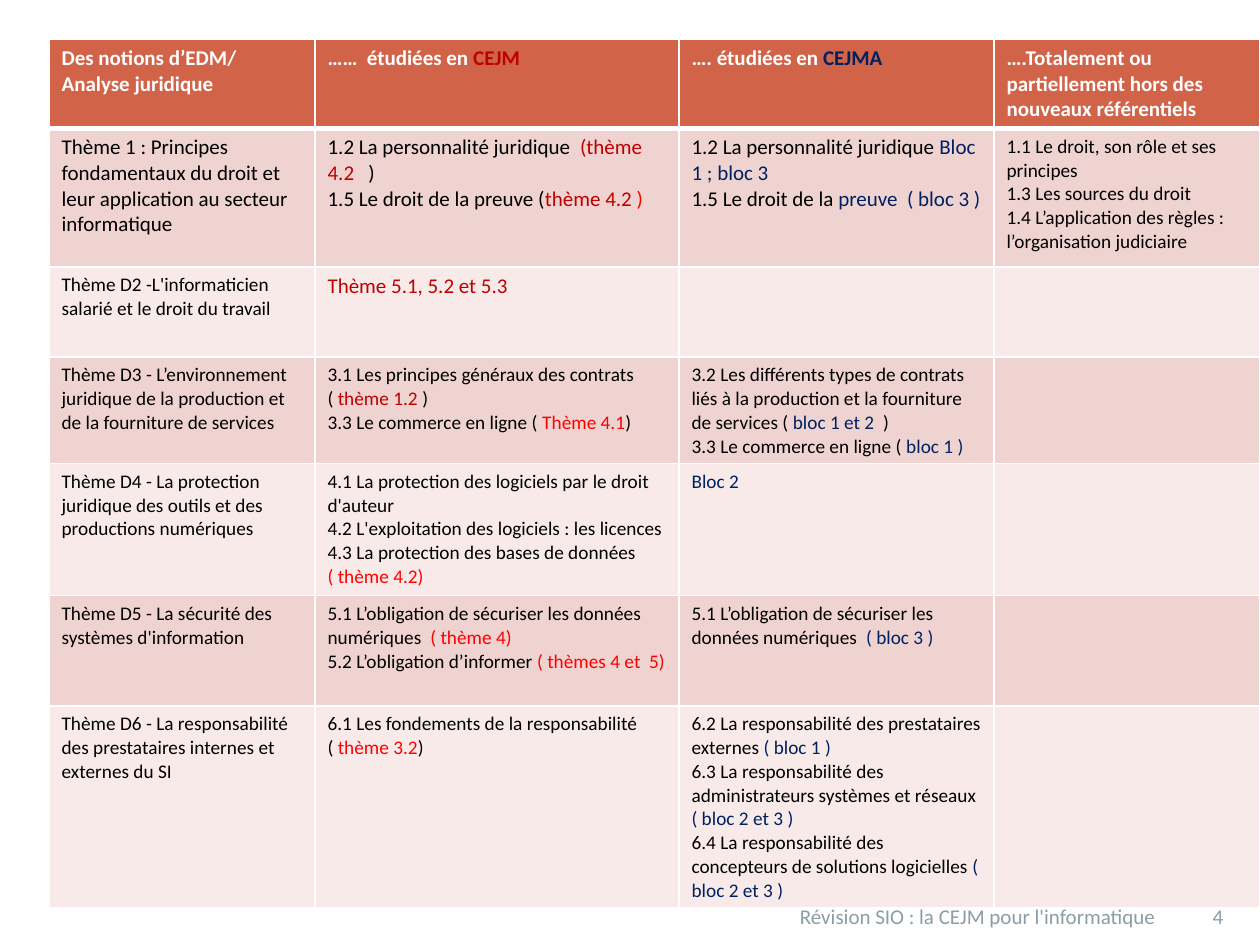
import pptx
import pptx.util
import pptx.dml.color
import pptx.enum.text
import pptx.oxml.ns
from lxml import etree

Pt = pptx.util.Pt
FONT = "Calibri"
WHITE, BLACK, GREY = "FFFFFF", "000000", "8B9DA6"
DARK, RED, NAVY = "C00000", "FF0000", "002060"
HEAD, BANDS = "D16349", ("EED3D0", "F7EAE9")

# A cell is a list of paragraphs, a paragraph a list of runs:
# plain text, or (text, colour).
ROWS = [
    [
        [["Des notions d’EDM/ Analyse juridique"]],
        [["……  étudiées en ", ("CEJM", DARK)]],
        [["…. étudiées en ", ("CEJMA", NAVY)]],
        [["….Totalement ou partiellement hors des nouveaux référentiels"]],
    ],
    [
        [["Thème 1 : Principes fondamentaux du droit et leur application au secteur informatique"]],
        [["1.2 La personnalité juridique  ", ("(thème 4.2   ", DARK), ")"],
         ["1.5 Le droit de la preuve (", ("thème 4.2 ", DARK), (")", RED)]],
        [["1.2 La personnalité juridique ", ("Bloc 1 ; bloc 3", NAVY)],
         ["1.5 Le droit de la ", ("preuve  ( bloc 3 )", NAVY)]],
        [["1.1 Le droit, son rôle et ses principes"],
         ["1.3 Les sources du droit"],
         ["1.4 L’application des règles : l’organisation judiciaire"]],
    ],
    [
        [["Thème D2 -L'informaticien salarié et le droit du travail"]],
        [[("Thème 5.1, 5.2 et 5.3", DARK)]],
        [], [],
    ],
    [
        [["Thème D3 - L’environnement juridique de la production et de la fourniture de services"]],
        [["3.1 Les principes généraux des contrats ( ", ("thème 1.2 ", DARK), ")"],
         ["3.3 Le commerce en ligne ( ", ("Thème 4.1", RED), ")"]],
        [["3.2 Les différents types de contrats liés à la production et la fourniture de services ( ",
          ("bloc 1 et 2 ", NAVY), " )"],
         ["3.3 Le commerce en ligne ( ", ("bloc 1 )", NAVY)]],
        [],
    ],
    [
        [["Thème D4 - La protection juridique des outils et des productions numériques"]],
        [["4.1 La protection des logiciels par le droit d'auteur"],
         ["4.2 L'exploitation des logiciels : les licences"],
         ["4.3 La protection des bases de données"],
         [("( thème 4.2)", RED)]],
        [[("Bloc 2", NAVY)]],
        [],
    ],
    [
        [["Thème D5 - La sécurité des systèmes d'information"]],
        [["5.1 L’obligation de sécuriser les données numériques  ", ("( thème 4)", RED)],
         ["5.2 L’obligation d’informer ", ("( thèmes 4 et  5)", RED)]],
        [["5.1 L’obligation de sécuriser les données numériques  ", ("( bloc 3 )", NAVY)]],
        [],
    ],
    [
        [["Thème D6 - La responsabilité des prestataires internes et externes du SI"]],
        [["6.1 Les fondements de la responsabilité ( ", ("thème 3.2", RED), ")"]],
        [["6.2 La responsabilité des prestataires externes ", ("( bloc 1 )", NAVY)],
         ["6.3 La responsabilité des administrateurs systèmes et réseaux ", ("( bloc 2 et 3 )", NAVY)],
         ["6.4 La responsabilité des concepteurs de solutions logicielles ", ("( bloc 2 et 3 )", NAVY)]],
        [],
    ],
]
WIDTHS = [152, 208, 180, 152]
HEIGHTS = [51, 79, 51.5, 61, 75.5, 63, 115.5]
LARGE = {(1, 0), (1, 1), (1, 2), (2, 1)}  # body cells set at 12 pt
LEFT, TOP = 28, 22.5

ALIGN = pptx.enum.text.PP_ALIGN
FOOT = [
    ("Révision SIO : la CEJM pour l'informatique", 450, 228, ALIGN.LEFT),
    ("4", 678, 36, ALIGN.CENTER),
]


def rgb(code):
    return pptx.dml.color.RGBColor.from_string(code)


def write(frame, paras, size, color, bold=False):
    for i, runs in enumerate(paras):
        para = frame.paragraphs[0] if i == 0 else frame.add_paragraph()
        for item in runs:
            text, tint = (item, color) if isinstance(item, str) else item
            run = para.add_run()
            run.text = text
            font = run.font
            font.name, font.size, font.bold = FONT, Pt(size), bold
            font.color.rgb = rgb(tint)


def edge(cell, side, width):
    """Draw a white border on one side (L, R, T or B) of a cell."""
    qn = pptx.oxml.ns.qn
    props = cell._tc.get_or_add_tcPr()
    line = etree.SubElement(props, qn("a:ln" + side), w=str(Pt(width)))
    fill = etree.SubElement(line, qn("a:solidFill"))
    etree.SubElement(fill, qn("a:srgbClr"), val=WHITE)


deck = pptx.Presentation()
deck.slide_width, deck.slide_height = Pt(720), Pt(540)
slide = deck.slides.add_slide(deck.slide_layouts[6])

for text, left, width, align in FOOT:
    frame = slide.shapes.add_textbox(Pt(left), Pt(497), Pt(width), Pt(37)).text_frame
    frame.word_wrap = True
    frame.vertical_anchor = pptx.enum.text.MSO_ANCHOR.BOTTOM
    write(frame, [[text]], 12, GREY)
    frame.paragraphs[0].alignment = align

table = slide.shapes.add_table(
    len(ROWS), len(WIDTHS), Pt(LEFT), Pt(TOP), Pt(sum(WIDTHS)), Pt(sum(HEIGHTS))
).table
for col, width in zip(table.columns, WIDTHS):
    col.width = Pt(width)
for r, (cells, height) in enumerate(zip(ROWS, HEIGHTS)):
    table.rows[r].height = Pt(height)
    top = r == 0
    for c, paras in enumerate(cells):
        cell = table.cell(r, c)
        for side in "LRTB":
            thick = (top and side == "B") or (r == 1 and side == "T")
            edge(cell, side, 3 if thick else 1)
        cell.fill.solid()
        cell.fill.fore_color.rgb = rgb(HEAD if top else BANDS[(r - 1) % 2])
        size = 12 if top or (r, c) in LARGE else 11
        write(cell.text_frame, paras, size, WHITE if top else BLACK, top)

deck.save("out.pptx")
